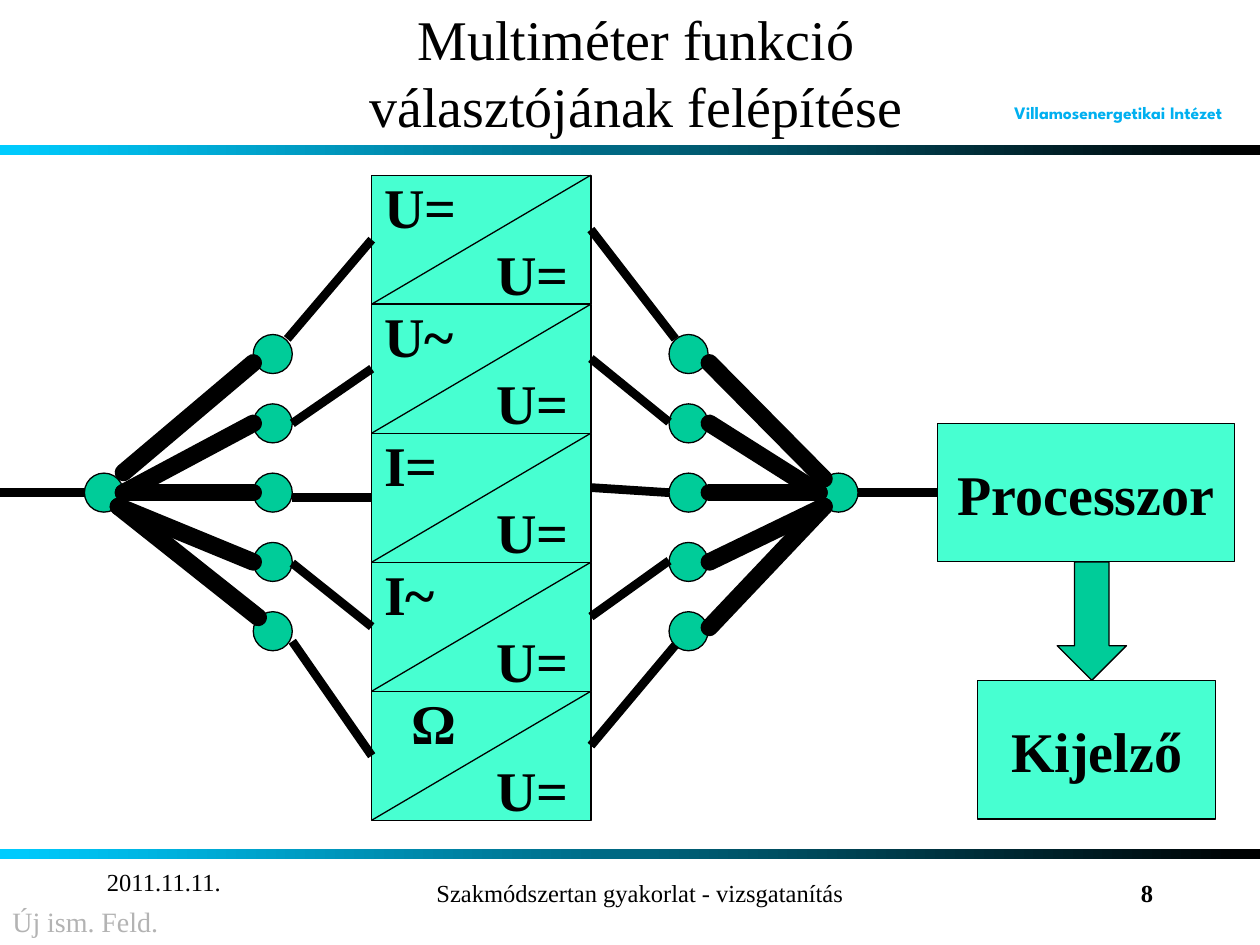
import lxml.etree
import pptx
import pptx.dml.color
import pptx.enum.shapes
import pptx.enum.text
import pptx.oxml.ns
import pptx.util

Inches = pptx.util.Inches
Pt = pptx.util.Pt
Kind = pptx.enum.shapes.MSO_SHAPE
Align = pptx.enum.text.PP_ALIGN
Anchor = pptx.enum.text.MSO_ANCHOR
Fit = pptx.enum.text.MSO_AUTO_SIZE

HUES = {
    "ink": "000000",
    "sky": "00CCFF",
    "brand": "00B0F0",
    "mint": "47FFD1",
    "green": "00CC99",
    "grey": "B3B3B3",
}
SERIF = "Times New Roman"
MODES = [("U=", 0), ("U~", 0), ("I=", 0), ("I~", 0), ("Ω", 0.22)]
CELL_X, CELL_TOP, CELL_W = 2.95, 1.39, 1.74
CELL_H = 5.12 / len(MODES)
MID, STEP, DOT = 3.91, 0.55, 0.31

LEFT_WIRES = [(2.28, 2.69), (2.32, 3.36), (2.32, 3.95), (2.32, 4.47), (2.32, 5.09)]
RIGHT_WIRES = [(5.36, 2.69), (5.31, 3.35), (5.31, 3.91), (5.31, 4.45), (5.36, 5.12)]
ARMS = [
    (0.98, 3.75, 2.01, 2.88),
    (0.98, 3.91, 2.01, 3.36),
    (0.98, 3.91, 2.01, 3.91),
    (0.94, 4.02, 2.01, 4.46),
    (0.94, 4.02, 2.05, 4.9),
    (5.63, 2.88, 6.54, 3.8),
    (5.63, 3.36, 6.5, 3.91),
    (5.63, 3.91, 6.5, 3.91),
    (5.63, 4.46, 6.54, 4.02),
    (5.63, 4.98, 6.54, 4.02),
]


def tint(name):
    return pptx.dml.color.RGBColor.from_string(HUES[name])


def add_run(para, text, size, hue="ink", bold=False, face=SERIF):
    run = para.add_run()
    run.text = text
    font = run.font
    font.size, font.bold, font.name = Pt(size), bold, face
    font.color.rgb = tint(hue)


def add_text(slide, box, text, size, align=Align.LEFT, anchor=Anchor.TOP, **look):
    frame = slide.shapes.add_textbox(*map(Inches, box)).text_frame
    frame.word_wrap = True
    frame.vertical_anchor = anchor
    para = frame.paragraphs[0]
    para.alignment = align
    add_run(para, text, size, **look)


def add_form(slide, kind, box, hue):
    form = slide.shapes.add_shape(kind, *map(Inches, box))
    form.shadow.inherit = False
    form.fill.solid()
    form.fill.fore_color.rgb = tint(hue)
    form.line.color.rgb = tint("ink")
    form.line.width = Pt(0.75)
    return form


def add_line(slide, ends, width, cap="flat"):
    line = slide.shapes.add_connector(
        pptx.enum.shapes.MSO_CONNECTOR.STRAIGHT, *map(Inches, ends))
    line.line.color.rgb = tint("ink")
    line.line.width = Pt(width)
    line.line._get_or_add_ln().set("cap", cap)
    props = line._element.spPr
    lxml.etree.SubElement(props, pptx.oxml.ns.qn("a:effectLst"))


def add_band(slide, top):
    band = add_form(slide, Kind.RECTANGLE, (0, top, 10, 0.08), "ink")
    band.line.fill.background()
    band.fill.gradient()
    band.fill.gradient_angle = 0
    for stop, place, hue in zip(band.fill.gradient_stops, (0, 1), ("sky", "ink")):
        stop.position = place
        stop.color.rgb = tint(hue)


def add_block(slide, box, rows, align):
    form = add_form(slide, Kind.RECTANGLE, box, "mint")
    frame = form.text_frame
    frame.word_wrap = True
    frame.vertical_anchor = Anchor.MIDDLE
    for i, (text, indent) in enumerate(rows):
        para = frame.add_paragraph() if i else frame.paragraphs[0]
        para.alignment = align
        para._p.get_or_add_pPr().set("marL", str(Inches(indent)))
        add_run(para, text, 32, bold=True)


def add_cell(slide, row, mode):
    top = CELL_TOP + row * CELL_H
    add_block(slide, (CELL_X, top, CELL_W, CELL_H), [mode, ("U=", 0.89)], Align.LEFT)
    add_line(slide, (CELL_X, top + CELL_H, CELL_X + CELL_W, top), 0.75)


def add_dot(slide, x, y):
    add_form(slide, Kind.OVAL, (x, y - DOT / 2, DOT, DOT), "green")


def add_title(slide):
    title = slide.shapes.title
    title.left, title.top, title.width, title.height = map(
        Inches, (1.3, 0.28, 7.5, 0.58))
    frame = title.text_frame
    frame.auto_size = Fit.NONE
    frame.vertical_anchor = Anchor.MIDDLE
    para = frame.paragraphs[0]
    para.alignment = Align.CENTER
    add_run(para, "Multiméter funkció", 32)
    para.add_line_break()
    add_run(para, "választójának felépítése", 32)


def add_frame(slide):
    add_band(slide, 1.15)
    add_band(slide, 6.74)
    add_text(slide, (7.95, 0.76, 2.05, 0.27), "Villamosenergetikai Intézet", 10,
             anchor=Anchor.MIDDLE, hue="brand", bold=True, face="League Spartan")
    add_text(slide, (0.75, 6.83, 2.08, 0.5), "2011.11.11.", 14)
    add_text(slide, (2.08, 6.92, 6, 0.42),
             "Szakmódszertan gyakorlat - vizsgatanítás", 14, Align.CENTER)
    add_text(slide, (7.17, 6.92, 2.08, 0.42), "8", 14, Align.RIGHT, bold=True)
    add_text(slide, (0, 7.13, 2.01, 0.37), "Új ism. Feld.", 16, hue="grey")


def add_switch(slide):
    add_line(slide, (0, MID, 0.75, MID), 5)
    add_line(slide, (6.73, MID, 7.48, MID), 5)
    add_dot(slide, 0.67, MID)
    add_dot(slide, 6.5, MID)
    for row, mode in enumerate(MODES):
        add_cell(slide, row, mode)
        for x in (2.01, 5.31):
            add_dot(slide, x, MID + (row - 2) * STEP)
        port = CELL_TOP + (row + 0.5) * CELL_H
        add_line(slide, (*LEFT_WIRES[row], CELL_X, port), 5)
        add_line(slide, (*RIGHT_WIRES[row], CELL_X + CELL_W, port - 0.08), 5)
    for arm in ARMS:
        add_line(slide, arm, 10, "rnd")


def main():
    deck = pptx.Presentation()
    deck.slide_width, deck.slide_height = Inches(10), Inches(7.5)
    slide = deck.slides.add_slide(deck.slide_layouts[5])
    add_title(slide)
    add_frame(slide)
    add_switch(slide)
    add_form(slide, Kind.DOWN_ARROW, (8.39, 4.46, 0.55, 0.94), "green")
    add_block(slide, (7.44, 3.36, 2.36, 1.1), [("Processzor", 0)], Align.CENTER)
    add_block(slide, (7.76, 5.4, 1.89, 1.1), [("Kijelző", 0)], Align.CENTER)
    deck.save("out.pptx")


if __name__ == "__main__":
    main()
